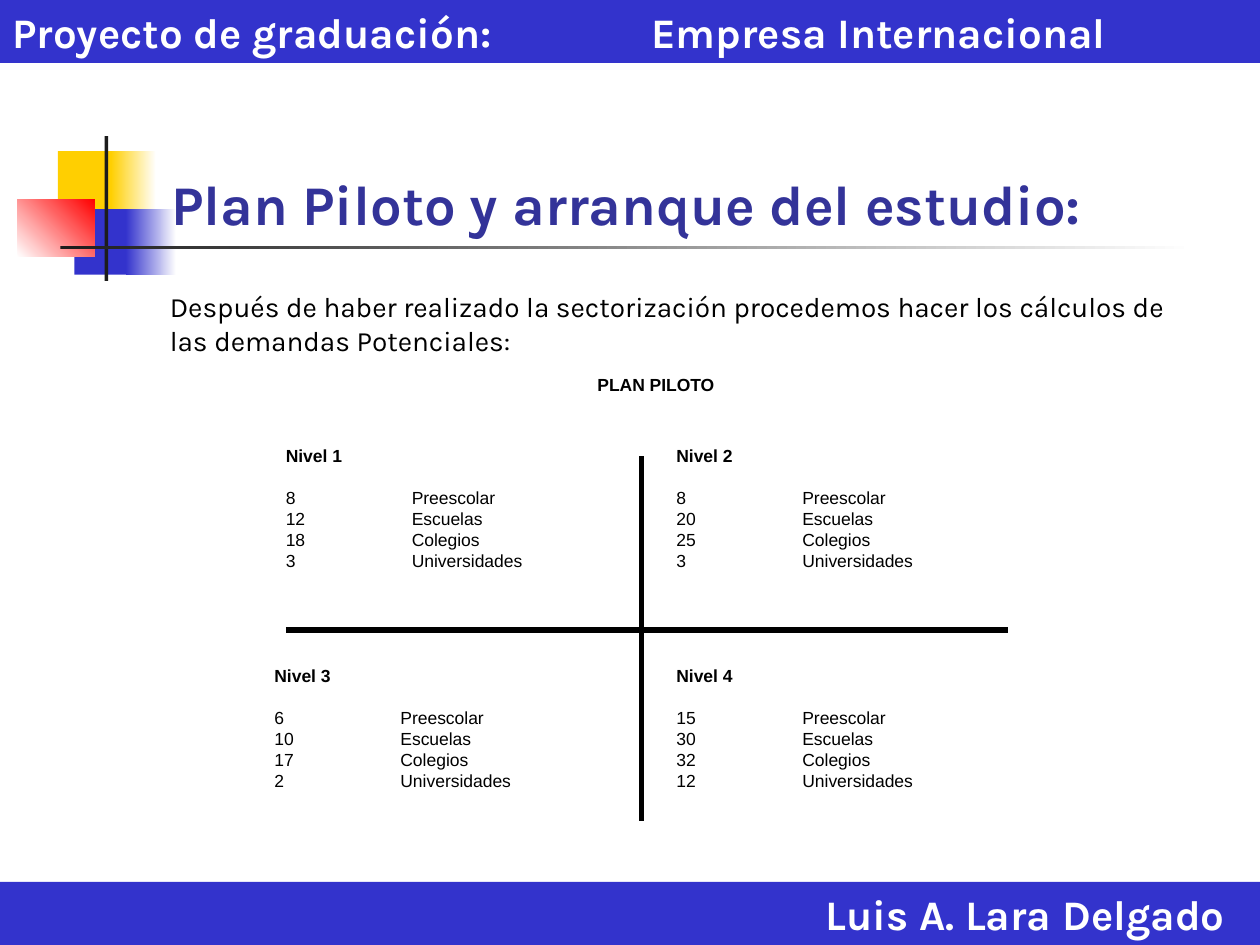
"""Build the pilot plan slide with its four level quadrants."""
from lxml import etree
from pptx import Presentation
from pptx.dml.color import RGBColor
from pptx.enum.shapes import MSO_CONNECTOR, MSO_SHAPE
from pptx.enum.text import MSO_ANCHOR, PP_ALIGN
from pptx.oxml.ns import qn
from pptx.util import Inches, Pt

RECT, LINE = MSO_SHAPE.RECTANGLE, MSO_CONNECTOR.STRAIGHT
TOP, MIDDLE, BOTTOM = MSO_ANCHOR.TOP, MSO_ANCHOR.MIDDLE, MSO_ANCHOR.BOTTOM
LEFT, CENTER, RIGHT = PP_ALIGN.LEFT, PP_ALIGN.CENTER, PP_ALIGN.RIGHT

THEME = {
    "blue": "3333CC", "gold": "FFCF01", "red": "FF0000", "dark": "1C1C1C",
    "white": "FFFFFF", "black": "000000", "navy": "333399",
    "title": ("Karla", 32, "navy", True),
    "bar": ("Karla", 24, "white", True),
    "body": ("Karla", 16, "black", False),
    "head": ("Arial", 10, "black", True),
    "row": ("Arial", 10, "black", False),
}

HEADER = "Proyecto de graduación:\tEmpresa Internacional"
FOOTER = "Luis A. Lara Delgado"
TITLE = "Plan Piloto y arranque del estudio:"
INTRO = ("Después de haber realizado la sectorización procedemos hacer "
         "los cálculos de las demandas Potenciales:")
LABEL = "PLAN PILOTO"
KINDS = ["Preescolar", "Escuelas", "Colegios", "Universidades"]
LEVELS = [
    ("Nivel 1", [8, 12, 18, 3], 2.17),
    ("Nivel 2", [8, 20, 25, 3], 5.27),
    ("Nivel 3", [6, 10, 17, 2], 2.08),
    ("Nivel 4", [15, 30, 32, 12], 5.27),
]
ROW_TOPS = [3.48, 5.23]
AXES = [(5.09, 3.62, 5.09, 6.52), (2.27, 5, 8, 5)]
DECOR = [
    ((0.46, 1.2, 0.48, 0.52), ["gold"], 0),
    ((0.88, 1.2, 0.36, 0.52), ["gold", "white"], 0),
    ((0.59, 1.66, 0.46, 0.52), ["blue"], 0),
    ((1, 1.66, 0.4, 0.52), ["blue", "white"], 0),
    ((0.14, 1.58, 0.61, 0.46), ["white", "red"], 45),
    ((0.83, 1.08, 0.03, 1.15), ["dark"], 0),
    ((0.48, 1.95, 9, 0.03), ["dark", "white"], 0),
]


def color(name):
    return RGBColor.from_string(THEME[name])


def add_rect(slide, box, fills, angle=0):
    shape = slide.shapes.add_shape(RECT, *map(Inches, box))
    shape.shadow.inherit = False
    shape.line.fill.background()
    if len(fills) == 1:
        shape.fill.solid()
        shape.fill.fore_color.rgb = color(fills[0])
    else:
        shape.fill.gradient()
        shape.fill.gradient_angle = angle
        for stop, name in zip(shape.fill.gradient_stops, fills):
            stop.color.rgb = color(name)
    return shape


def add_box(slide, box):
    return slide.shapes.add_textbox(*map(Inches, box))


def add_tab(para, inches):
    tabs = etree.SubElement(para._p.get_or_add_pPr(), qn("a:tabLst"))
    etree.SubElement(tabs, qn("a:tab"), pos=str(Inches(inches)), algn="l")


def write(shape, lines, align=LEFT, anchor=TOP, tab=None):
    frame = shape.text_frame
    frame.word_wrap = True
    frame.vertical_anchor = anchor
    for index, (text, style) in enumerate(lines):
        para = frame.add_paragraph() if index else frame.paragraphs[0]
        para.text = text
        para.alignment = align
        if tab:
            add_tab(para, tab)
        font = para.font
        font.name, size, tint, font.bold = THEME[style]
        font.size = Pt(size)
        font.color.rgb = color(tint)
    return frame


def add_axis(slide, ends):
    axis = slide.shapes.add_connector(LINE, *map(Inches, ends))
    axis.line.color.rgb = color("black")
    axis.line.width = Pt(3)
    etree.SubElement(axis._element.spPr, qn("a:effectLst"))


def add_level(slide, index, level):
    name, counts, left = level
    rows = [(f"{count}\t{kind}", "row") for count, kind in zip(counts, KINDS)]
    shape = add_box(slide, (left, ROW_TOPS[index // 2], 2.7, 1.18))
    frame = write(shape, [(name, "head")] + rows, tab=1)
    frame.paragraphs[0].space_after = Pt(12)


def main():
    deck = Presentation()
    deck.slide_width, deck.slide_height = Inches(10), Inches(7.5)
    slide = deck.slides.add_slide(deck.slide_layouts[6])
    for box, fills, angle in DECOR:
        add_rect(slide, box, fills, angle)
    write(add_box(slide, (1.26, 0.68, 8.52, 1.25)), [(TITLE, "title")],
          anchor=BOTTOM)
    footer = add_rect(slide, (0, 7, 10, 0.5), ["blue"])
    write(footer, [(FOOTER, "bar")], RIGHT, MIDDLE).margin_right = Inches(0.28)
    header = add_rect(slide, (0, 0, 10, 0.5), ["blue"])
    write(header, [(HEADER, "bar")], anchor=MIDDLE, tab=5.07)
    write(add_box(slide, (1.25, 2.25, 8.17, 0.64)), [(INTRO, "body")])
    for ends in AXES:
        add_axis(slide, ends)
    for index, level in enumerate(LEVELS):
        add_level(slide, index, level)
    label = add_rect(slide, (3.36, 2.92, 3.69, 0.52), ["white"])
    write(label, [(LABEL, "head")], CENTER)
    deck.save("out.pptx")


if __name__ == "__main__":
    main()
